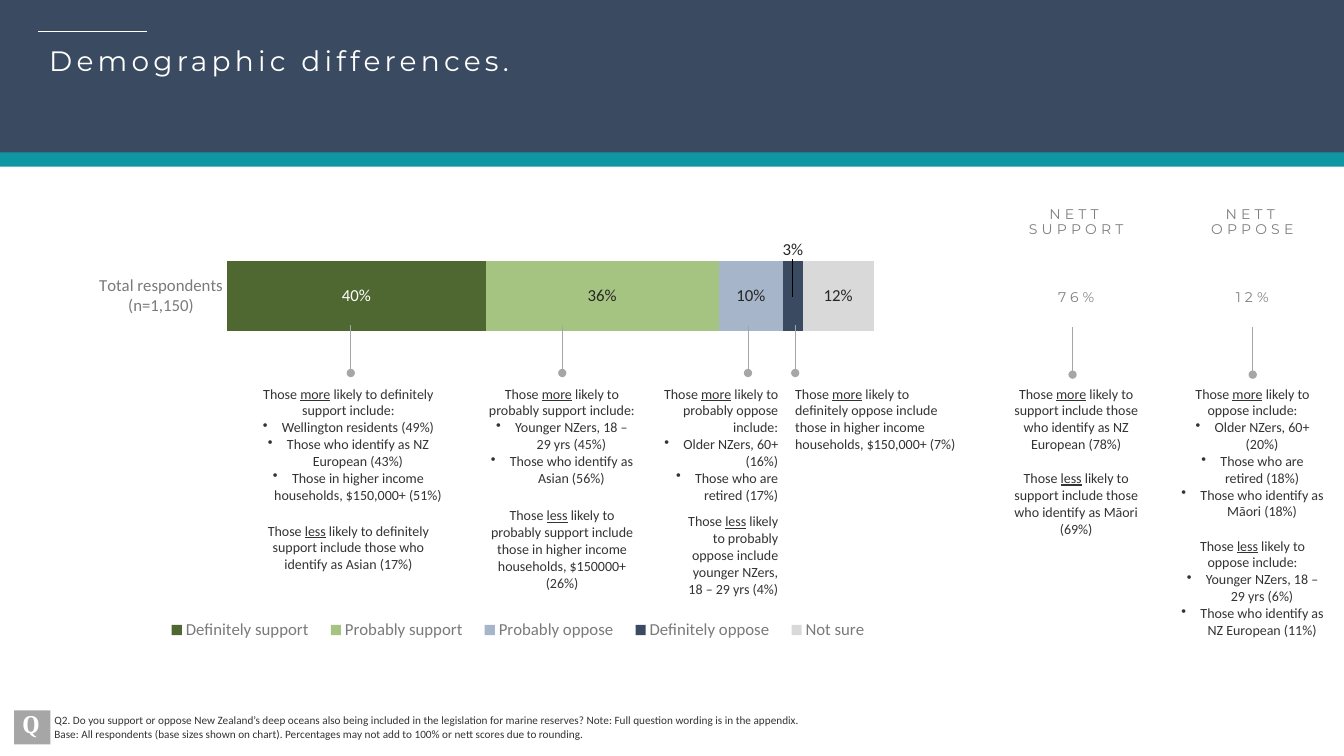
from dataclasses import dataclass, field
from typing import Any

import lxml.etree
import pptx
import pptx.chart.data
import pptx.dml.color
import pptx.enum.chart
import pptx.enum.shapes
import pptx.enum.text
import pptx.oxml.ns
import pptx.util

Cm = pptx.util.Cm
qn = pptx.oxml.ns.qn
Align = pptx.enum.text.PP_ALIGN
Anchor = pptx.enum.text.MSO_ANCHOR


@dataclass(frozen=True)
class Theme:
    navy: str = "3A4A60"
    teal: str = "0E96A3"
    white: str = "FFFFFF"
    grey: str = "A6A6A6"
    heading: str = "808080"
    axis: str = "7A7A7A"
    body: str = "333333"
    label: str = "262626"
    title_size: int = 20
    badge_size: int = 18
    chart_size: int = 12
    body_size: int = 10
    note_size: int = 8


THEME = Theme()


@dataclass(frozen=True)
class Style:
    size: int = THEME.body_size
    color: str = THEME.body
    name: str = "Calibri"
    bold: bool = False
    tracking: int = 0  # hundredths of a point
    line_spacing: float = 1.0


@dataclass(frozen=True)
class Box:
    left: float
    top: float
    width: float
    height: float

    def lengths(self) -> list[int]:
        return [Cm(value) for value in (self.left, self.top, self.width, self.height)]


@dataclass(frozen=True)
class Callout:
    box: Box
    word: str
    ending: str
    bullets: tuple[str, ...] = field(default=())
    align: Any = Align.CENTER


@dataclass(frozen=True)
class Answer:
    name: str
    share: float
    color: str
    label_color: str = THEME.label


TITLE = Style(THEME.title_size, THEME.white, "Montserrat", tracking=300, line_spacing=0.9)
NETT = Style(THEME.body_size, THEME.heading, "Montserrat", tracking=300, line_spacing=0.9)
BADGE = Style(THEME.badge_size, THEME.white, "Cambria", bold=True)
NOTE = Style(THEME.note_size)
BODY = Style()

ANSWERS = [
    Answer("Definitely support", 0.40, "4F6730", THEME.white),
    Answer("Probably support", 0.36, "A6C481"),
    Answer("Probably oppose", 0.10, "A6B5C9"),
    Answer("Definitely oppose", 0.03, THEME.navy, THEME.white),
    Answer("Not sure", 0.12, "D9D9D9"),
]
NETT_SCORES = [(25.48, "NETT SUPPORT", "76%"), (29.92, "NETT OPPOSE", "12%")]
POINTERS = [(8.84, 8.2), (14.17, 8.2), (18.85, 8.2), (20.04, 8.2), (27.03, 8.24), (31.57, 8.24)]
CALLOUTS = [
    Callout(Box(6.1, 9.58, 5.36, 3.25), "more", "definitely support include:",
            ("Wellington residents (49%)", "Those who identify as NZ European (43%)",
             "Those in higher income households, $150,000+ (51%)")),
    Callout(Box(6.43, 13.03, 4.7, 1.96), "less",
            "definitely support include those who identify as Asian (17%)"),
    Callout(Box(12.04, 9.58, 4.24, 2.82), "more", "probably support include:",
            ("Younger NZers, 18 – 29 yrs (45%)", "Those who identify as Asian (56%)")),
    Callout(Box(12.12, 12.65, 4.09, 2.39), "less",
            "probably support include those in higher income households, $150000+ (26%)"),
    Callout(Box(16, 9.58, 3.86, 3.25), "more", "probably oppose include:",
            ("Older NZers, 60+ (16%)", "Those who are retired (17%)"), Align.RIGHT),
    Callout(Box(16.89, 12.8, 2.97, 2.39), "less",
            "probably oppose include younger NZers, 18 – 29 yrs (4%)", align=Align.RIGHT),
    Callout(Box(19.79, 9.58, 4.7, 1.96), "more",
            "definitely oppose include those in higher income households, $150,000+ (7%)",
            align=Align.LEFT),
    Callout(Box(25.15, 9.58, 3.94, 1.96), "more",
            "support include those who identify as NZ European (78%)"),
    Callout(Box(25.15, 11.71, 3.94, 1.96), "less",
            "support include those who identify as Māori (69%)"),
    Callout(Box(29.51, 9.58, 4.11, 3.68), "more", "oppose include:",
            ("Older NZers, 60+ (20%)", "Those who are retired (18%)",
             "Those who identify as Māori (18%)")),
    Callout(Box(29.51, 13.41, 4.11, 2.82), "less", "oppose include:",
            ("Younger NZers, 18 – 29 yrs (6%)", "Those who identify as NZ European (11%)")),
]


def rgb(color: str) -> Any:
    return pptx.dml.color.RGBColor.from_string(color)


def set_attributes(target: Any, values: dict[str, Any]) -> None:
    for name, value in values.items():
        setattr(target, name, value)


def format_font(font: Any, style: Style) -> None:
    set_attributes(font, {"name": style.name, "size": pptx.util.Pt(style.size), "bold": style.bold})
    font.color.rgb = rgb(style.color)


def add_run(paragraph: Any, text: str, style: Style, underline: bool = False) -> None:
    run = paragraph.add_run()
    run.text = text
    format_font(run.font, style)
    if underline:
        run.font.underline = True
    if style.tracking:
        run.font._element.set("spc", str(style.tracking))


def add_text(slide: Any, box: Box, lines: list[list[str]], style: Style,
             align: Any = Align.LEFT, anchor: Any = Anchor.TOP) -> None:
    """Each line is a list of runs: the second run is underlined; a "•" first run makes a bullet."""
    frame = slide.shapes.add_textbox(*box.lengths()).text_frame
    set_attributes(frame, {"word_wrap": True, "vertical_anchor": anchor})
    for index, runs in enumerate(lines):
        paragraph = frame.add_paragraph() if index else frame.paragraphs[0]
        set_attributes(paragraph, {"alignment": align, "line_spacing": style.line_spacing})
        bulleted = runs[0] == "•"
        if bulleted:
            properties = paragraph._p.get_or_add_pPr()
            properties.set("marL", str(Cm(0.48)))
            properties.set("indent", str(-Cm(0.48)))
            lxml.etree.SubElement(properties, qn("a:buChar")).set("char", "•")
        for position, text in enumerate(runs[1:] if bulleted else runs):
            add_run(paragraph, text, style, underline=position == 1)


def add_panel(slide: Any, box: Box, color: str) -> None:
    shape = slide.shapes.add_shape(pptx.enum.shapes.MSO_SHAPE.RECTANGLE, *box.lengths())
    shape.shadow.inherit = False
    shape.fill.solid()
    shape.fill.fore_color.rgb = rgb(color)
    shape.line.fill.background()


def add_line(slide: Any, start: tuple[float, float], end: tuple[float, float],
             color: str, dot: bool = False) -> None:
    connector = slide.shapes.add_connector(
        pptx.enum.shapes.MSO_CONNECTOR.STRAIGHT, *[Cm(value) for value in start + end])
    connector.line.color.rgb = rgb(color)
    connector.line.width = pptx.util.Pt(0.5)
    if dot:
        lxml.etree.SubElement(connector.line._get_or_add_ln(), qn("a:tailEnd")).set("type", "oval")
    lxml.etree.SubElement(connector._element.spPr, qn("a:effectLst"))


def make_layout(values: dict[str, Any]) -> Any:
    layout = lxml.etree.Element(qn("c:layout"), nsmap={"c": pptx.oxml.ns.nsuri("c")})
    manual = lxml.etree.SubElement(layout, qn("c:manualLayout"))
    for name, value in values.items():
        lxml.etree.SubElement(manual, qn(f"c:{name}")).set("val", str(value))
    return layout


def place(element: Any, after: str, values: dict[str, Any]) -> None:
    """Give a chart part a manual layout, in fractions of the chart."""
    for old in element.findall(qn("c:layout")):
        element.remove(old)
    layout = make_layout(values)
    previous = element.find(qn(after)) if after else None
    if previous is None:
        element.insert(0, layout)
    else:
        previous.addnext(layout)


def add_answer_chart(slide: Any, box: Box) -> None:
    data = pptx.chart.data.CategoryChartData(number_format="0%")
    data.categories = ["Total respondents\n(n=1,150)"]
    for answer in ANSWERS:
        data.add_series(answer.name, [answer.share])
    chart = slide.shapes.add_chart(
        pptx.enum.chart.XL_CHART_TYPE.BAR_STACKED, *box.lengths(), data).chart
    set_attributes(chart, {"has_title": False, "has_legend": True})
    format_font(chart.font, BODY)
    axis_style = Style(THEME.chart_size, THEME.axis)

    # Axes and legend
    set_attributes(chart.value_axis, {"minimum_scale": 0, "maximum_scale": 1, "major_unit": 0.2,
                                      "has_major_gridlines": False, "visible": False})
    chart.category_axis.major_tick_mark = pptx.enum.chart.XL_TICK_MARK.NONE
    chart.category_axis.format.line.fill.background()
    format_font(chart.category_axis.tick_labels.font, axis_style)
    set_attributes(chart.legend, {"position": pptx.enum.chart.XL_LEGEND_POSITION.BOTTOM,
                                  "include_in_layout": False})
    format_font(chart.legend.font, axis_style)
    edges = {"xMode": "edge", "yMode": "edge"}
    place(chart.legend._element, "c:legendPos",
          edges | {"x": 0.16, "y": 0.86, "w": 0.81, "h": 0.07})
    place(chart._chartSpace.chart.plotArea, "", {"layoutTarget": "inner"} | edges
          | {"x": 0.24, "y": 0.061, "w": 0.722, "h": 0.225})

    # Bars and their labels
    plot = chart.plots[0]
    set_attributes(plot, {"gap_width": 50, "overlap": 100, "vary_by_categories": False})
    center = pptx.enum.chart.XL_LABEL_POSITION.CENTER
    for answer, series in zip(ANSWERS, plot.series):
        series.format.fill.solid()
        series.format.fill.fore_color.rgb = rgb(answer.color)
        if answer.share < 0.05:  # too narrow: the label sits above the bar
            label = series.points[0].data_label
            format_font(label.font, Style(THEME.chart_size, THEME.label))
            label.position = center
            place(label._get_or_add_dLbl(), "c:idx", {"x": 0, "y": -0.1})
        labels = series.data_labels
        set_attributes(labels, {"show_value": True, "position": center,
                                "number_format": "0%", "number_format_is_linked": False})
        format_font(labels.font, Style(THEME.chart_size, answer.label_color))


def main() -> None:
    presentation = pptx.Presentation()
    set_attributes(presentation, {"slide_width": Cm(33.87), "slide_height": Cm(19.05)})
    slide = presentation.slides.add_slide(presentation.slide_layouts[6])

    # Header
    add_panel(slide, Box(0, 0, 33.87, 4.06), THEME.navy)
    add_line(slide, (0.97, 0.8), (3.71, 0.8), THEME.white)
    add_panel(slide, Box(0, 3.84, 33.87, 0.36), THEME.teal)
    add_text(slide, Box(0.99, 1.07, 31.7, 1.24), [["Demographic differences."]], TITLE)

    # Question note
    add_panel(slide, Box(0.36, 17.9, 0.91, 0.86), THEME.grey)
    add_text(slide, Box(0.33, 17.73, 1.14, 1.02), [["Q"]], BADGE)
    add_text(slide, Box(1.12, 17.86, 21.13, 0.94), [
        ["Q2. Do you support or oppose New Zealand’s deep oceans also being included in the "
         "legislation for marine reserves? Note: Full question wording is in the appendix."],
        ["Base: All respondents (base sizes shown on chart). Percentages may not add to 100% "
         "or nett scores due to rounding."]], NOTE)

    # Chart and nett scores
    add_answer_chart(slide, Box(0.3, 5.44, 22.58, 11.66))
    for left, heading, score in NETT_SCORES:
        for top, text in ((4.37, heading), (6.27, score)):
            add_text(slide, Box(left, top, 3.28, 2.49), [[text]], NETT, Align.CENTER, Anchor.MIDDLE)

    # Pointers and callouts
    for left, top in POINTERS:
        add_line(slide, (left, top), (left, top + 1.2), THEME.grey, dot=True)
    for callout in CALLOUTS:
        lines = [["Those ", callout.word, f" likely to {callout.ending}"]]
        lines += [["•", bullet] for bullet in callout.bullets]
        add_text(slide, callout.box, lines, BODY, callout.align)

    presentation.save("out.pptx")


if __name__ == "__main__":
    main()
